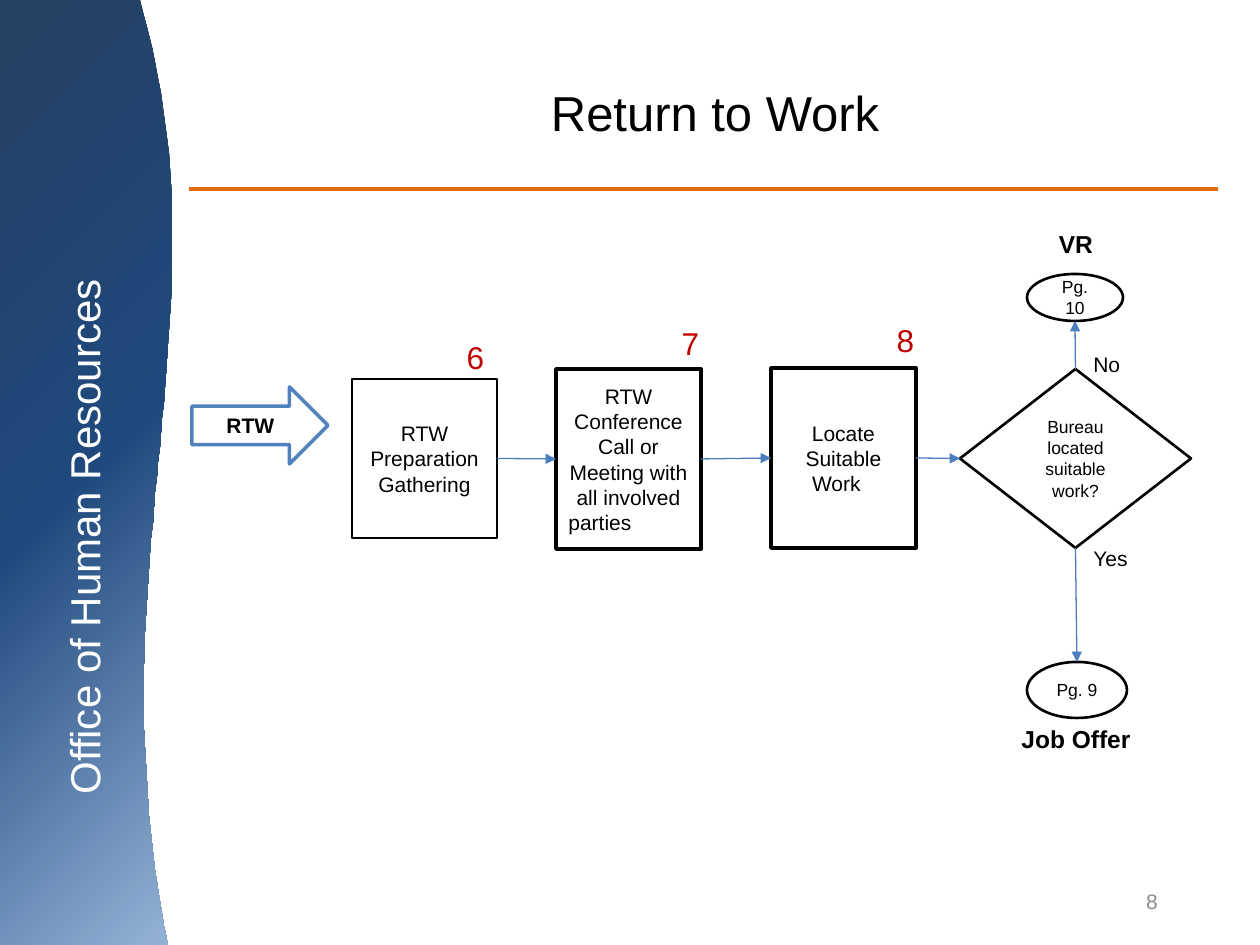
from copy import deepcopy

from lxml import etree
from pptx import Presentation
from pptx.dml.color import RGBColor
from pptx.enum.shapes import MSO_CONNECTOR, MSO_SHAPE
from pptx.enum.text import MSO_ANCHOR, PP_ALIGN
from pptx.oxml.ns import qn
from pptx.util import Pt

RECT, DIAMOND = MSO_SHAPE.RECTANGLE, MSO_SHAPE.DIAMOND
OVAL, ARROW = MSO_SHAPE.FLOWCHART_CONNECTOR, MSO_SHAPE.RIGHT_ARROW
STRAIGHT = MSO_CONNECTOR.STRAIGHT
LEFT, CENTER, RIGHT = PP_ALIGN.LEFT, PP_ALIGN.CENTER, PP_ALIGN.RIGHT
TOP, MIDDLE = MSO_ANCHOR.TOP, MSO_ANCHOR.MIDDLE
SITE_TOP, SITE_LEFT, SITE_BOTTOM, SITE_RIGHT = range(4)

FONT = "Arial"
PX = 914400 / 126
PAGE_W, PAGE_H = 1260, 945
BLACK, WHITE, RED, GREY = "000000", "FFFFFF", "C00000", "8C8C8C"
BLUE, LINK_BLUE, ORANGE = "4F81BD", "4B7EBC", "E46C0A"

# Side band: right edge as a cubic curve, and gradient stops
BAND_CURVE = [(140, 0), (232, 316), (91, 562), (168, 945)]
BAND_STOPS = [(0, "254061"), (0.5, "1F497D"), (1, "95B3D7")]

# name: (kind, box, text, size, bold, fill, line colour, line width)
STEPS = {
    "start": (ARROW, (192, 387, 136, 77), "RTW", 12, True, WHITE, BLUE, 2),
    "prepare": (RECT, (352, 379, 145, 159), "RTW Preparation Gathering",
                12, False, None, BLACK, 1.5),
    "confer": (RECT, (556, 369, 145, 180),
               "RTW Conference Call or Meeting with all involved parties\t",
               12, False, WHITE, BLACK, 2),
    "locate": (RECT, (771, 368, 145, 180), "Locate Suitable Work\t",
               12, False, WHITE, BLACK, 2),
    "decide": (DIAMOND, (960, 369, 231, 179), "Bureau located suitable work?",
               10, False, None, BLACK, 1.5),
    "rehab": (OVAL, (1027, 274, 96, 47), "Pg. 10", 10, False, None, BLACK, 1.5),
    "offer": (OVAL, (1027, 662, 100, 56), "Pg. 9", 10, False, None, BLACK, 1.5),
}
LINKS = [
    ("prepare", SITE_RIGHT, "confer", SITE_LEFT),
    ("confer", SITE_RIGHT, "locate", SITE_LEFT),
    ("locate", SITE_RIGHT, "decide", SITE_LEFT),
    ("decide", SITE_TOP, "rehab", SITE_BOTTOM),
    ("decide", SITE_BOTTOM, "offer", SITE_TOP),
]
# (box, text, format)
LABELS = [
    ((200, 33, 1030, 158), "Return to Work", {"size": 28, "anchor": MIDDLE}),
    ((876, 876, 294, 50), "8",
     {"size": 12, "color": GREY, "align": RIGHT, "anchor": MIDDLE}),
    ((1038, 223, 76, 43), "VR", {"size": 14, "bold": True}),
    ((997, 718, 158, 43), "Job Offer", {"size": 14, "bold": True}),
    ((1081, 345, 53, 38), "No", {"size": 12, "align": LEFT, "wrap": False}),
    ((1081, 539, 60, 38), "Yes", {"size": 12, "align": LEFT, "wrap": False}),
    ((444, 332, 63, 50), "6", {"size": 18, "color": RED}),
    ((659, 318, 63, 50), "7", {"size": 18, "color": RED}),
    ((874, 315, 63, 50), "8", {"size": 18, "color": RED}),
]


def emu(*lengths):
    return [round(length * PX) for length in lengths]


def rgb(value):
    return RGBColor.from_string(value)


def write(shape, text, size=12, color=BLACK, bold=False, align=CENTER,
          anchor=TOP, wrap=True):
    frame = shape.text_frame
    frame.word_wrap = wrap
    frame.vertical_anchor = anchor
    para = frame.paragraphs[0]
    para.alignment = align
    span = para.add_run()
    span.text = text
    span.font.name, span.font.size, span.font.bold = FONT, Pt(size), bold
    span.font.color.rgb = rgb(color)


def add_label(page, box, text, **style):
    label = page.shapes.add_textbox(*emu(*box))
    write(label, text, **style)
    return label


def add_line(page, color, width, ends=(0, 0, 0, 0)):
    line = page.shapes.add_connector(STRAIGHT, *emu(*ends))
    line.line.color.rgb = rgb(color)
    line.line.width = Pt(width)
    etree.SubElement(line._element.spPr, qn("a:effectLst"))
    return line


def add_step(page, kind, box, text, size, bold, fill, color, width):
    step = page.shapes.add_shape(kind, *emu(*box))
    step.shadow.inherit = False
    if fill:
        step.fill.solid()
        step.fill.fore_color.rgb = rgb(fill)
    else:
        step.fill.background()
    step.line.color.rgb = rgb(color)
    step.line.width = Pt(width)
    write(step, text, size=size, bold=bold, anchor=MIDDLE)
    return step


def add_link(page, steps, source, source_site, target, target_site):
    link = add_line(page, LINK_BLUE, 0.75)
    link.begin_connect(steps[source], source_site)
    link.end_connect(steps[target], target_site)
    if STEPS[target][0] == OVAL:  # ovals have eight sites, not four
        end = next(link._element.iter(qn("a:endCxn")))
        end.set("idx", str(2 * target_site))
    etree.SubElement(link.line._get_or_add_ln(), qn("a:tailEnd"), type="triangle")


def curve_point(t):
    weights = ((1 - t) ** 3, 3 * t * (1 - t) ** 2, 3 * t * t * (1 - t), t ** 3)
    return tuple(sum(w * p[axis] for w, p in zip(weights, BAND_CURVE))
                 for axis in (0, 1))


def add_band(page):
    edge = [curve_point(i / 60) for i in range(61)]
    builder = page.shapes.build_freeform(0, 0, scale=PX)
    builder.add_line_segments(edge + [(0, PAGE_H)], close=True)
    band = builder.convert_to_shape()
    band.shadow.inherit = False
    band.line.fill.background()
    band.fill.gradient()
    band.fill.gradient_angle = 315
    stop_list = next(band._element.iter(qn("a:gsLst")))
    stop_list.append(deepcopy(stop_list[0]))
    for stop, (position, color) in zip(band.fill.gradient_stops, BAND_STOPS):
        stop.position = position
        stop.color.rgb = rgb(color)


def main():
    deck = Presentation()
    deck.slide_width, deck.slide_height = emu(PAGE_W, PAGE_H)
    page = deck.slides.add_slide(deck.slide_layouts[6])

    # Side band, its upright caption and the title rule
    add_band(page)
    caption = add_label(page, (-261, 502, 689, 70), "Office of Human Resources",
                        size=24, color=WHITE, anchor=MIDDLE)
    caption.rotation = 270
    add_line(page, ORANGE, 2.25, (189, 189, 1218, 189))

    # Flow chart
    steps = {name: add_step(page, *step) for name, step in STEPS.items()}
    for link in LINKS:
        add_link(page, steps, *link)

    # Title, step numbers and other labels
    for box, text, style in LABELS:
        add_label(page, box, text, **style)

    deck.save("out.pptx")


if __name__ == "__main__":
    main()
